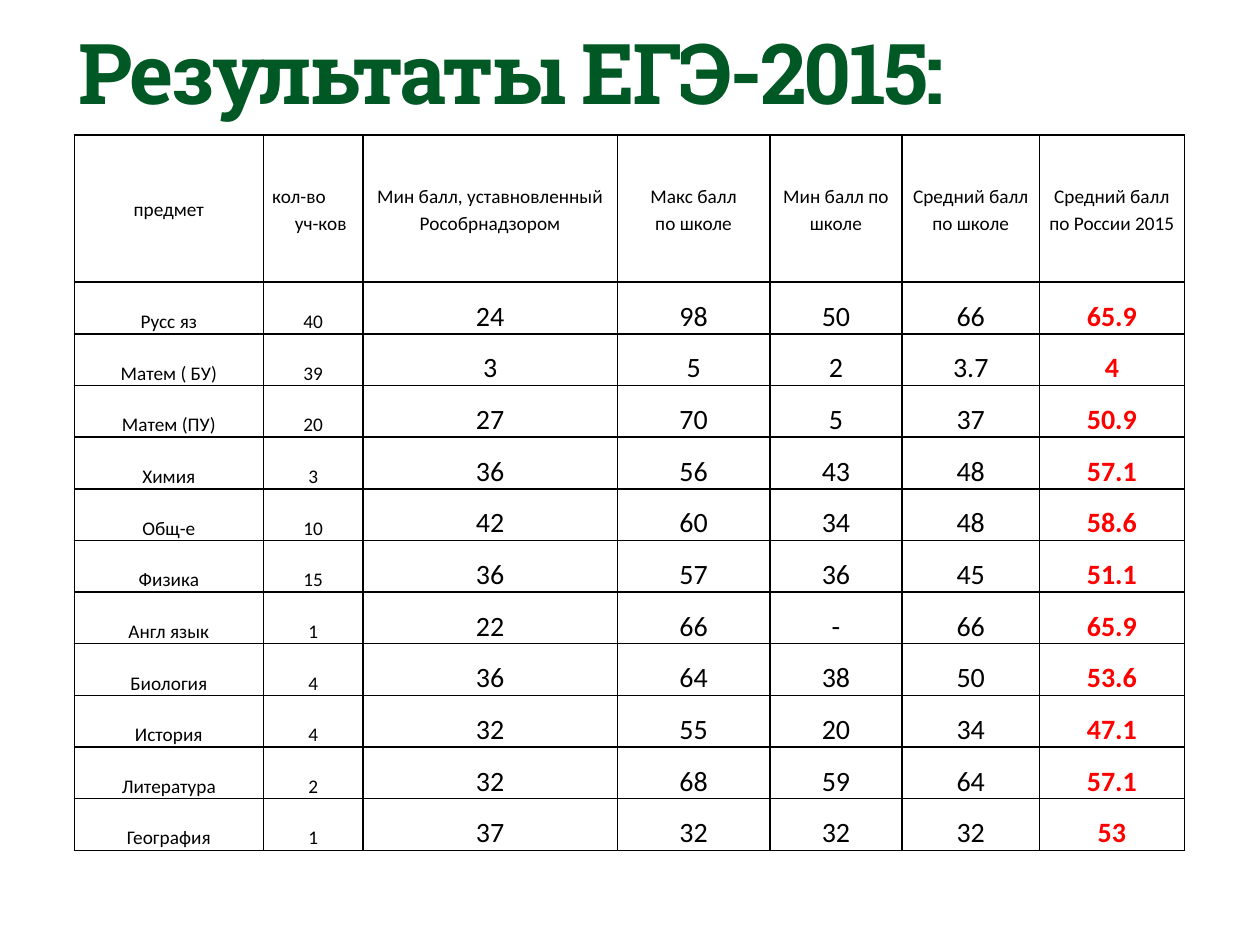
from dataclasses import dataclass

from lxml import etree
from pptx import Presentation
from pptx import util as u
from pptx.dml.color import RGBColor
from pptx.enum import text as t
from pptx.oxml import ns

BLACK, RED, GREEN = "000000", "FF0000", "005825"


@dataclass
class Column:
    width: float
    heading: str
    size: int = 16
    color: str = BLACK
    bold: bool = False


COLUMNS = [
    Column(1.5, "предмет", size=11),
    Column(0.79, "кол-во\nуч-ков", size=11),
    Column(2.02, "Мин балл, уставновленный Рособрнадзором"),
    Column(1.21, "Макс балл\nпо школе"),
    Column(1.05, "Мин балл по школе"),
    Column(1.09, "Средний балл по школе"),
    Column(1.15, "Средний балл по России 2015", color=RED, bold=True),
]
COUNT_COLUMN = 1

RESULTS = [
    ("Русс яз", "40", "24", "98", "50", "66", "65.9"),
    ("Матем ( БУ)", "39", "3", "5", "2", "3.7", "4"),
    ("Матем (ПУ)", "20", "27", "70", "5", "37", "50.9"),
    ("Химия", "3", "36", "56", "43", "48", "57.1"),
    ("Общ-е", "10", "42", "60", "34", "48", "58.6"),
    ("Физика", "15", "36", "57", "36", "45", "51.1"),
    ("Англ язык", "1", "22", "66", "-", "66", "65.9"),
    ("Биология", "4", "36", "64", "38", "50", "53.6"),
    ("История", "4", "32", "55", "20", "34", "47.1"),
    ("Литература", "2", "32", "68", "59", "64", "57.1"),
    ("География", "1", "37", "32", "32", "32", "53"),
]
HEADING_HEIGHT, RESULT_HEIGHT = 1.17, 0.41


def rgb(color: str) -> RGBColor:
    return RGBColor.from_string(color)


def write(frame, content: str, *, size: float, font: str = "Calibri",
          color: str = BLACK, bold: bool = False, align=t.PP_ALIGN.CENTER,
          line_spacing: float = 1.15, tracking: float = 0) -> None:
    """Fill a text frame, one paragraph for each line of content."""
    for index, line in enumerate(content.split("\n")):
        paragraph = frame.paragraphs[0] if index == 0 else frame.add_paragraph()
        paragraph.alignment = align
        paragraph.line_spacing = line_spacing
        run = paragraph.add_run()
        run.text = line
        run.font.name = font
        run.font.size = u.Pt(size)
        run.font.bold = bold
        run.font.color.rgb = rgb(color)
        if tracking:
            run.font._element.set("spc", str(round(tracking * 100)))


def add_borders(cell, color: str = BLACK, width: float = 1) -> None:
    properties = cell._tc.get_or_add_tcPr()
    for side in ("a:lnL", "a:lnR", "a:lnT", "a:lnB"):
        line = etree.SubElement(properties, ns.qn(side), w=str(u.Pt(width)))
        fill = etree.SubElement(line, ns.qn("a:solidFill"))
        etree.SubElement(fill, ns.qn("a:srgbClr"), val=color)


def format_cell(cell, anchor) -> None:
    cell.margin_left = cell.margin_right = u.Inches(0.07)
    cell.margin_top = cell.margin_bottom = 0
    cell.vertical_anchor = anchor
    add_borders(cell)
    cell.fill.background()


def add_title(slide) -> None:
    box = slide.shapes.add_textbox(
        u.Inches(0.42), u.Inches(0.25), u.Inches(9.17), u.Inches(0.73))
    frame = box.text_frame
    frame.word_wrap = True
    frame.vertical_anchor = t.MSO_ANCHOR.MIDDLE
    frame.margin_left = u.Inches(0.2)
    frame.margin_right = frame.margin_top = frame.margin_bottom = 0
    write(frame, "Результаты ЕГЭ-2015:", size=48, font="Roboto Slab",
          color=GREEN, bold=True, align=t.PP_ALIGN.LEFT, line_spacing=0.9,
          tracking=-1.5)


def add_results(slide) -> None:
    width = sum(column.width for column in COLUMNS)
    height = HEADING_HEIGHT + RESULT_HEIGHT * len(RESULTS)
    table = slide.shapes.add_table(
        len(RESULTS) + 1, len(COLUMNS), u.Inches(0.59), u.Inches(1.07),
        u.Inches(width), u.Inches(height)).table
    table.first_row = table.horz_banding = False

    for index, row in enumerate(table.rows):
        row.height = u.Inches(RESULT_HEIGHT if index else HEADING_HEIGHT)

    for index, column in enumerate(COLUMNS):
        table.columns[index].width = u.Inches(column.width)

        # Heading
        heading = table.cell(0, index)
        format_cell(heading, t.MSO_ANCHOR.MIDDLE)
        stepped = index == COUNT_COLUMN
        write(heading.text_frame, column.heading, size=11,
              align=t.PP_ALIGN.LEFT if stepped else t.PP_ALIGN.CENTER)
        if stepped:
            second_line = heading.text_frame.paragraphs[1]
            second_line._p.get_or_add_pPr().set("marL", str(u.Inches(0.18)))

        # Results below it
        for row, result in enumerate(RESULTS, start=1):
            cell = table.cell(row, index)
            format_cell(cell, t.MSO_ANCHOR.BOTTOM)
            write(cell.text_frame, result[index], size=column.size,
                  color=column.color, bold=column.bold)


def main() -> None:
    presentation = Presentation()
    presentation.slide_width = u.Inches(10)
    presentation.slide_height = u.Inches(7.5)
    slide = presentation.slides.add_slide(presentation.slide_layouts[6])
    add_title(slide)
    add_results(slide)
    presentation.save("out.pptx")


if __name__ == "__main__":
    main()
